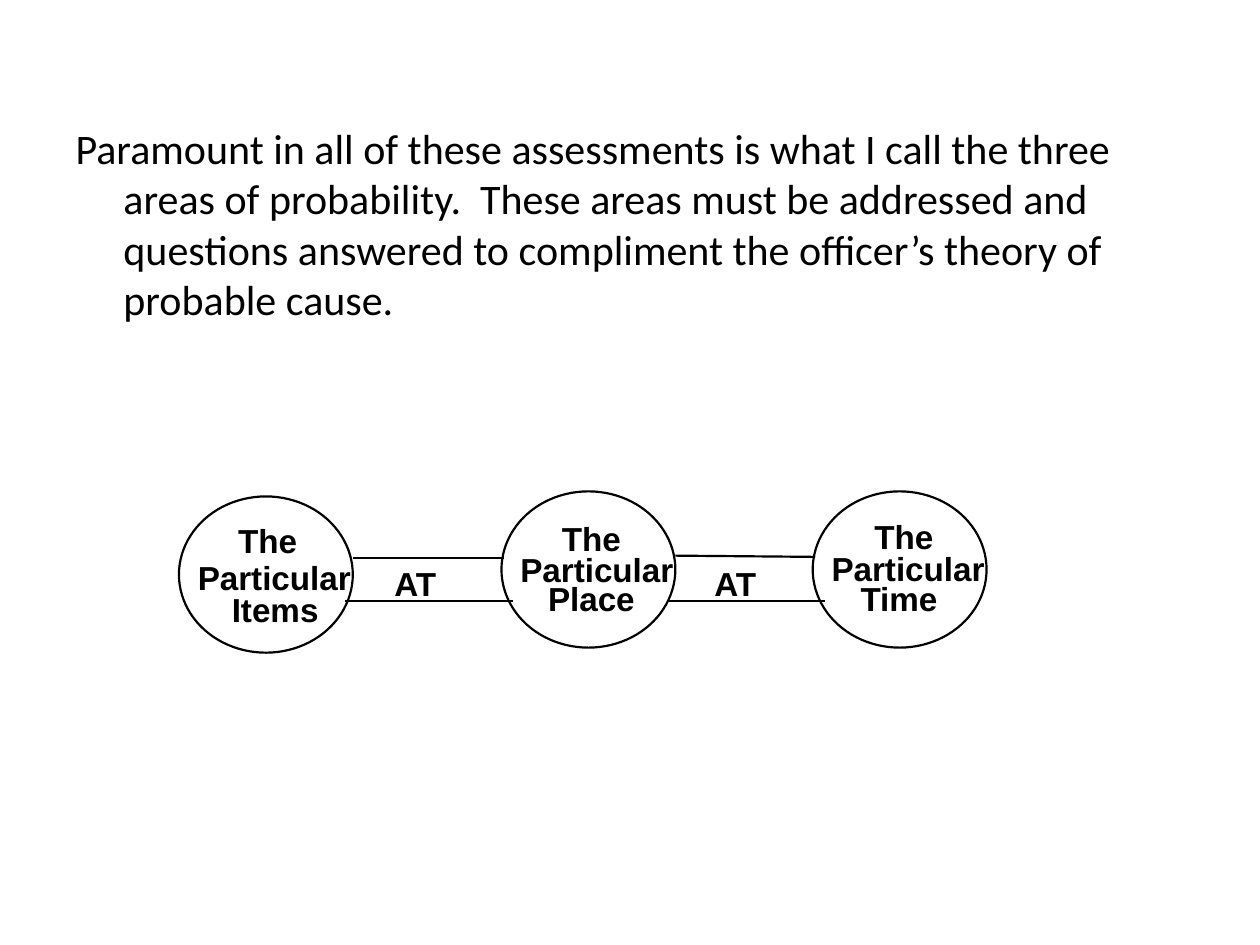
from dataclasses import dataclass

from lxml.etree import SubElement
from pptx import Presentation
from pptx.dml.color import RGBColor
from pptx.enum.shapes import MSO_CONNECTOR as CONN, MSO_SHAPE as SHAPE
from pptx.enum.text import MSO_ANCHOR as ANCHOR, MSO_AUTO_SIZE as AUTOSIZE
from pptx.oxml.ns import qn
from pptx.util import Inches, Pt


@dataclass(frozen=True)
class Theme:
    """Colours, fonts and sizes of the slide."""
    ink: RGBColor = RGBColor(0, 0, 0)
    body_font: str = "Calibri"
    label_font: str = "Arial"
    body_size: float = 24
    label_size: float = 19
    line_width: float = 1.25


THEME = Theme()
CIRCLE_W, CIRCLE_H = 1.38, 1.24
LABEL_H = 0.32
CIRCLES = [
    (1.42, 3.94, [("The", 0.47, 0.19, 0.48), ("Particular", 0.15, 0.48, 1.23),
                  ("Items", 0.42, 0.74, 0.7)]),
    (3.98, 3.9, [("The", 0.48, 0.21, 0.48), ("Particular", 0.15, 0.46, 1.23),
                 ("Place", 0.37, 0.69, 0.7)]),
    (6.45, 3.9, [("The", 0.49, 0.2, 0.48), ("Particular", 0.15, 0.45, 1.23),
                 ("Time", 0.38, 0.69, 0.62)]),
]
LINKS = [
    (3.13, [(2.8, 4.43, 4, 4.43), (2.74, 4.77, 4.07, 4.77)]),
    (5.67, [(5.36, 4.41, 6.47, 4.42), (5.3, 4.77, 6.55, 4.77)]),
]


def write(tf, text, font=THEME.label_font, size=THEME.label_size, bold=True):
    """Write one formatted run into a text frame and return its paragraph."""
    p = tf.paragraphs[0]
    r = p.add_run()
    r.text = text
    r.font.name, r.font.size, r.font.bold = font, Pt(size), bold
    r.font.color.rgb = THEME.ink
    return p


def outline(line):
    """Give a line the diagram's stroke."""
    line.color.rgb = THEME.ink
    line.width = Pt(THEME.line_width)


def add_body(s, text, x, y, w, h):
    """Place the body placeholder with a hanging indent and no bullet."""
    sp = s.placeholders[1]
    sp.left, sp.top, sp.width, sp.height = map(Inches, (x, y, w, h))
    tf = sp.text_frame
    tf.auto_size = AUTOSIZE.NONE
    tf.vertical_anchor = ANCHOR.TOP
    p = write(tf, text, font=THEME.body_font, size=THEME.body_size, bold=False)
    pPr = p._p.get_or_add_pPr()
    pPr.set("marL", str(Inches(0.38)))
    pPr.set("indent", str(Inches(-0.38)))
    SubElement(pPr, qn("a:buNone"))


def add_label(s, text, x, y, w):
    """Add an unwrapped label without margins."""
    tf = s.shapes.add_textbox(*map(Inches, (x, y, w, LABEL_H))).text_frame
    tf.margin_left = tf.margin_top = tf.margin_right = tf.margin_bottom = 0
    tf.word_wrap = False
    tf.auto_size = AUTOSIZE.SHAPE_TO_FIT_TEXT
    write(tf, text)


def add_circle(s, x, y, labels):
    """Add one area of probability with its label lines."""
    box = map(Inches, (x, y, CIRCLE_W, CIRCLE_H))
    sp = s.shapes.add_shape(SHAPE.OVAL, *box)
    sp.shadow.inherit = False
    sp.fill.background()
    outline(sp.line)
    for text, dx, dy, w in labels:
        add_label(s, text, x + dx, y + dy, w)


def add_link(s, x, lines):
    """Add the pair of lines between two circles and the word between them."""
    for ends in lines:
        cxn = s.shapes.add_connector(CONN.STRAIGHT, *map(Inches, ends))
        outline(cxn.line)
        SubElement(cxn._element.spPr, qn("a:effectLst"))
    add_label(s, "AT", x, 4.47, 0.34)


def main():
    """Build and save the slide."""
    prs = Presentation()
    prs.slide_width, prs.slide_height = Inches(10), Inches(7.5)
    s = prs.slides.add_slide(prs.slide_layouts[1])
    title = s.shapes.title._element
    title.getparent().remove(title)
    add_body(s, "Paramount in all of these assessments is what I call the three "
             "areas of probability.  These areas must be addressed and questions "
             "answered to compliment the officer’s theory of probable cause.",
             0.5, 0.92, 8.42, 1.75)
    for x, y, labels in CIRCLES:
        add_circle(s, x, y, labels)
    for x, lines in LINKS:
        add_link(s, x, lines)
    prs.save("out.pptx")


if __name__ == "__main__":
    main()
